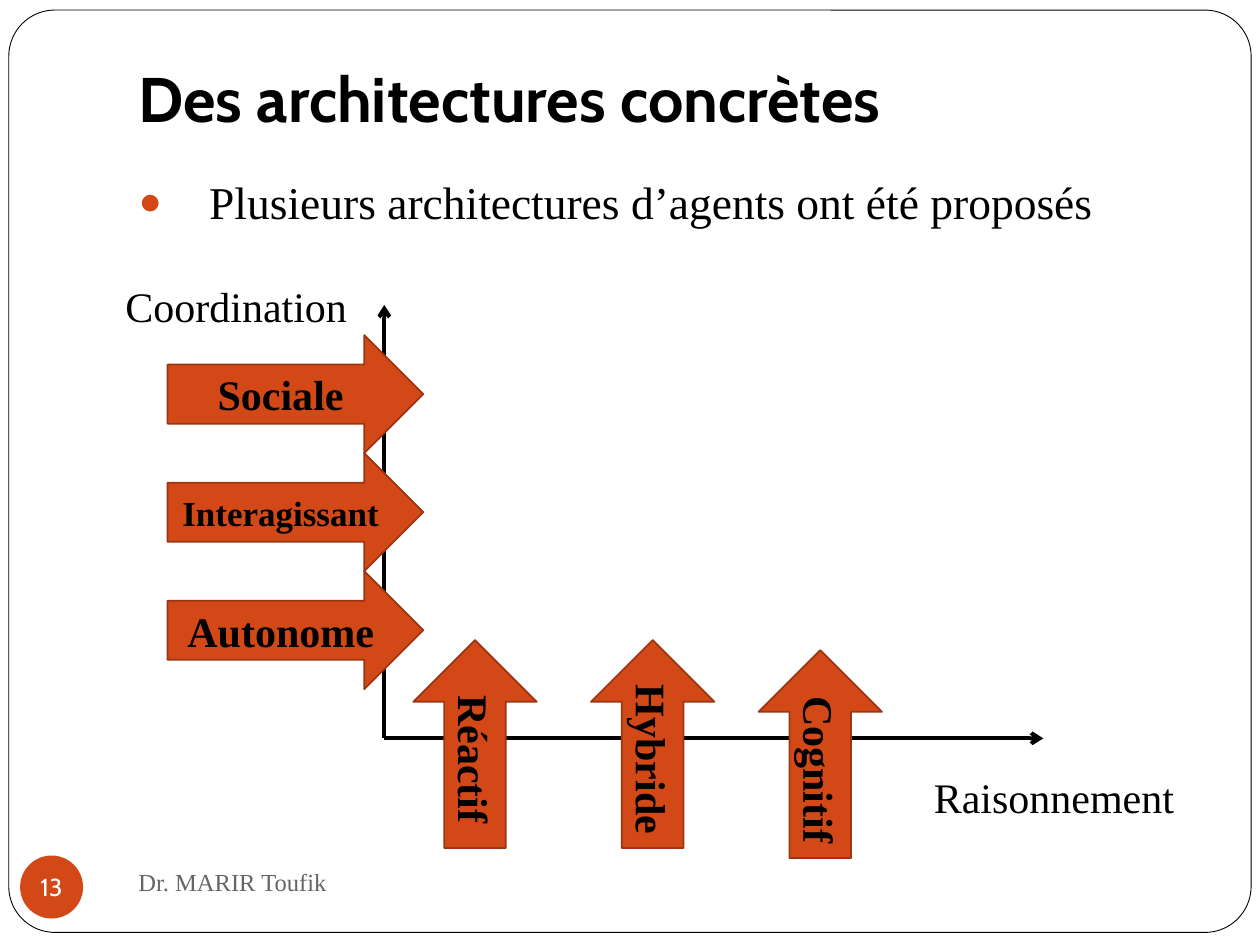
from dataclasses import dataclass

from lxml.etree import SubElement
from pptx import Presentation
from pptx.dml.color import RGBColor
from pptx.enum.shapes import MSO_CONNECTOR, MSO_SHAPE
from pptx.enum.text import MSO_ANCHOR, MSO_AUTO_SIZE, PP_ALIGN
from pptx.oxml.ns import qn
from pptx.util import Inches, Pt


@dataclass(frozen=True)
class Theme:
    """Colours, fonts and type sizes of the slide."""
    ink: RGBColor = RGBColor(0x00, 0x00, 0x00)
    paper: RGBColor = RGBColor(0xFF, 0xFF, 0xFF)
    accent: RGBColor = RGBColor(0xD3, 0x48, 0x17)
    accent_edge: RGBColor = RGBColor(0x9C, 0x35, 0x11)
    muted: RGBColor = RGBColor(0x69, 0x64, 0x64)
    heading_font: str = "Cabin"
    body_font: str = "Times New Roman"
    title_size: int = 36
    list_size: int = 26
    label_size: int = 24
    tight_label_size: int = 20
    footer_size: int = 14


THEME = Theme()


def place(part, box):
    """Move a part to a box given in inches."""
    part.left, part.top, part.width, part.height = map(Inches, box)


def write(part, text, size, color=THEME.ink, font=THEME.body_font, bold=False,
          align=PP_ALIGN.CENTER, anchor=MSO_ANCHOR.MIDDLE):
    """Write one formatted run into a part and return its paragraph."""
    frame = part.text_frame
    frame.word_wrap = True
    frame.auto_size = MSO_AUTO_SIZE.NONE
    frame.vertical_anchor = anchor
    paragraph = frame.paragraphs[0]
    paragraph.alignment = align
    run = paragraph.add_run()
    run.text = text
    run.font.size = Pt(size)
    run.font.name = font
    run.font.bold = bold
    run.font.color.rgb = color
    return paragraph


def add_filled(shapes, preset, box, fill, edge=None, edge_width=1):
    """Add a flat preset shape with an optional outline."""
    shape = shapes.add_shape(preset, *map(Inches, box))
    shape.shadow.inherit = False
    shape.fill.solid()
    shape.fill.fore_color.rgb = fill
    if edge is None:
        shape.line.fill.background()
    else:
        shape.line.color.rgb = edge
        shape.line.width = Pt(edge_width)
    return shape


def add_frame(slide, box):
    """Add the rounded page border behind everything else."""
    border = add_filled(slide.shapes, MSO_SHAPE.ROUNDED_RECTANGLE, box,
                        THEME.paper, THEME.ink, 0.5)
    border.adjustments[0] = 0.05
    border._element.getparent().insert(2, border._element)


def fill_title(slide, box, text):
    """Place and write the slide title."""
    title = slide.shapes.title
    place(title, box)
    write(title, text, THEME.title_size, font=THEME.heading_font, bold=True,
          align=PP_ALIGN.LEFT, anchor=MSO_ANCHOR.BOTTOM)
    title.text_frame.margin_bottom = Inches(0.1)


def fill_body(slide, box, text):
    """Place the body and write its bulleted line."""
    body = slide.placeholders[1]
    place(body, box)
    point = write(body, text, THEME.list_size, align=PP_ALIGN.JUSTIFY,
                  anchor=MSO_ANCHOR.TOP)
    point.space_before = Pt(0)
    properties = point._p.get_or_add_pPr()
    properties.set("marL", str(Inches(0.56)))
    properties.set("indent", str(-Inches(0.56)))
    bullet_color = SubElement(properties, qn("a:buClr"))
    SubElement(bullet_color, qn("a:srgbClr"), val=str(THEME.accent))
    SubElement(properties, qn("a:buSzPct"), val="85000")
    SubElement(properties, qn("a:buChar"), char="●")


def add_footer(slide, box, author, number):
    """Add the page badge at the left of the box and the author beside it."""
    left, top, width, height = box
    badge = add_filled(slide.shapes, MSO_SHAPE.OVAL,
                       (left, top + 0.04, height, height), THEME.accent)
    write(badge, number, THEME.footer_size, THEME.paper, THEME.heading_font)
    frame = badge.text_frame
    frame.word_wrap = False
    frame.margin_left = frame.margin_right = 0
    frame.margin_top = frame.margin_bottom = 0
    offset = 0.84
    credit = slide.shapes.add_textbox(
        *map(Inches, (left + offset, top, width - offset, height)))
    write(credit, author, THEME.footer_size, THEME.muted, align=PP_ALIGN.LEFT)


def add_axis(shapes, start, end):
    """Add an axis line with an open arrowhead at its end."""
    axis = shapes.add_connector(MSO_CONNECTOR.STRAIGHT,
                                *map(Inches, (*start, *end)))
    axis.line.color.rgb = THEME.ink
    axis.line.width = Pt(2.25)
    SubElement(axis.line._get_or_add_ln(), qn("a:tailEnd"), type="arrow")
    SubElement(axis._element.spPr, qn("a:effectLst"))


def add_axes(slide, box, vertical_name, horizontal_name):
    """Group both axes of the box with their names."""
    left, top, width, height = box
    right, bottom = left + width, top + height
    shapes = slide.shapes.add_group_shape().shapes
    for tip in ((left, top), (right, bottom)):
        add_axis(shapes, (left, bottom), tip)
    for name, x, y in ((vertical_name, left - 2.27, top - 0.23),
                       (horizontal_name, right - 1.01, bottom + 0.23)):
        label = add_filled(shapes, MSO_SHAPE.RECTANGLE, (x, y, 2.19, 0.47),
                           THEME.paper)
        write(label, name, THEME.label_size)


def add_arrow(slide, preset, box, name, size=THEME.label_size):
    """Add a labelled block arrow."""
    arrow = add_filled(slide.shapes, preset, box, THEME.accent,
                       THEME.accent_edge)
    write(arrow, name, size, bold=True)
    return arrow


def add_coordination_levels(slide, box, levels):
    """Stack right arrows from the bottom of the box to its top."""
    left, top, width, height = box
    step = height / len(levels)
    for index, (name, size) in enumerate(levels, start=1):
        add_arrow(slide, MSO_SHAPE.RIGHT_ARROW,
                  (left, top + height - index * step, width, step), name, size)


def add_reasoning_levels(slide, box, levels):
    """Set up arrows with turned labels at their offsets in the box."""
    left, top, width, height = box
    for name, dx, dy in levels:
        arrow = add_arrow(slide, MSO_SHAPE.UP_ARROW,
                          (left + dx, top + dy, 0.98, height - 0.08), name)
        arrow.text_frame._txBody.bodyPr.set("vert", "vert")


def main():
    """Build and save the slide."""
    deck = Presentation()
    deck.slide_width, deck.slide_height = Inches(10), Inches(7.5)
    slide = deck.slides.add_slide(deck.slide_layouts[1])
    add_frame(slide, (0.07, 0.08, 9.86, 7.32))
    fill_title(slide, (1, 0.3, 8.5, 0.87), "Des architectures concrètes")
    fill_body(slide, (1, 1.33, 8.5, 5.26),
              "Plusieurs architectures d’agents ont été proposés")
    add_footer(slide, (0.16, 6.75, 5.17, 0.5), "Dr. MARIR Toufik", "13")
    add_axes(slide, (3.05, 2.42, 5.23, 3.44), "Coordination", "Raisonnement")
    add_coordination_levels(slide, (1.33, 2.66, 2.03, 2.81), (
        ("Autonome", THEME.label_size),
        ("Interagissant", THEME.tight_label_size),
        ("Sociale", THEME.label_size)))
    add_reasoning_levels(slide, (3.28, 5.08, 3.72, 1.73), (
        ("Réactif", 0, 0), ("Hybride", 1.41, 0), ("Cognitif", 2.74, 0.08)))
    deck.save("out.pptx")


if __name__ == "__main__":
    main()
